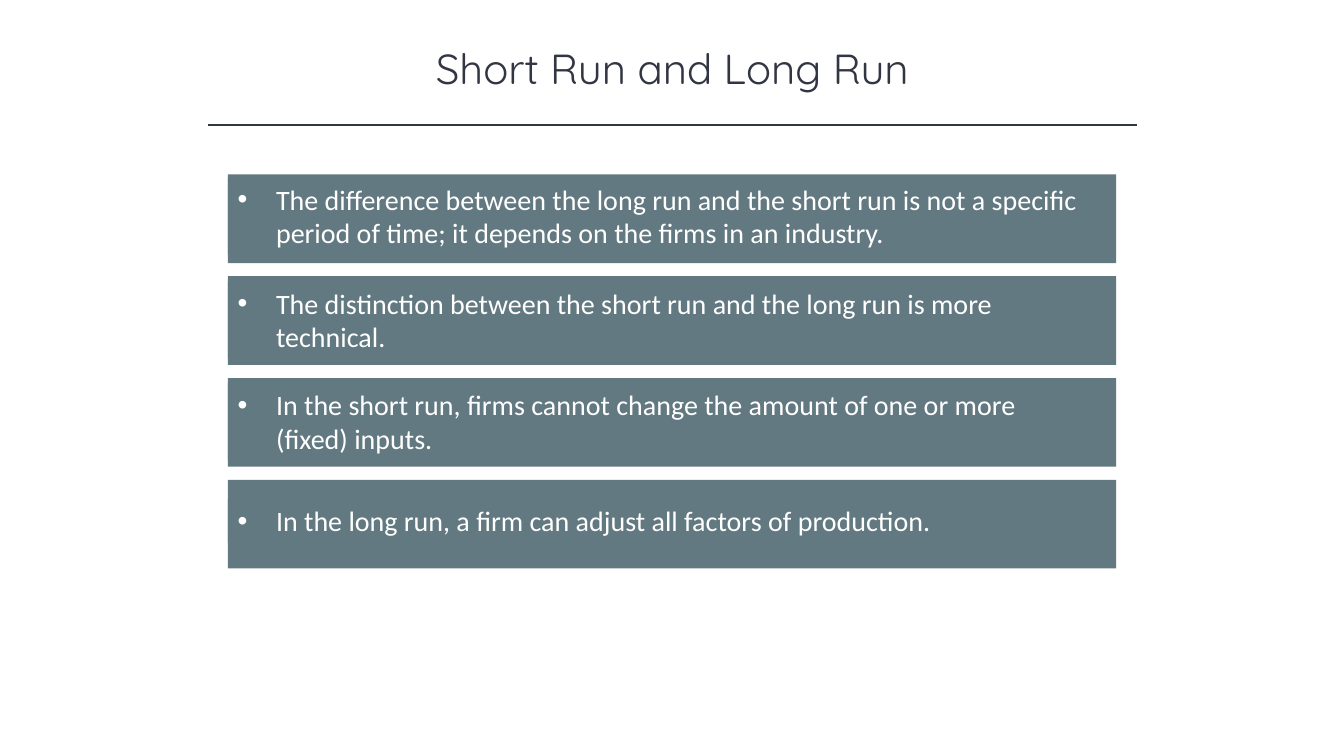
from dataclasses import dataclass

from lxml import etree
from pptx import Presentation
from pptx import util as u
from pptx.dml.color import RGBColor
from pptx.enum import shapes, text
from pptx.oxml.ns import qn

TITLE = "Short Run and Long Run"
POINTS = [
    ("The difference between the long run and the short run is not a specific "
     "period of time; it depends on the firms in an industry.", 0.03, 0.77),
    ("The distinction between the short run and the long run is more technical.", 0.05, 0.77),
    ("In the short run, firms cannot change the amount of one or more (fixed) inputs.", 0.05, 0.77),
    ("In the long run, a firm can adjust all factors of production.", 0.19, 0.44),
]


@dataclass(frozen=True)
class Theme:
    ink: str = "323542"
    bar: str = "627981"
    light: str = "FFFFFF"
    title_font: str = "Quicksand"
    body_font: str = "Calibri"
    title_size: int = 30
    body_size: int = 20


THEME = Theme()
BAR_LEFT, BAR_TOP, BAR_WIDTH, BAR_HEIGHT = 2.26, 1.73, 8.81, 0.88
BAR_PITCH = 1.01
LABEL_WIDTH = 8.54
INDENT = 0.38


def inches(*lengths):
    return [u.Inches(length) for length in lengths]


def write(shape, words, *, font, size, color, align, bullet=False):
    frame = shape.text_frame
    frame.word_wrap = True
    frame.vertical_anchor = text.MSO_ANCHOR.TOP
    frame.auto_size = text.MSO_AUTO_SIZE.SHAPE_TO_FIT_TEXT
    para = frame.paragraphs[0]
    para.alignment = align
    if bullet:
        props = para._p.get_or_add_pPr()
        props.set("marL", str(u.Inches(INDENT)))
        props.set("indent", str(-u.Inches(INDENT)))
        etree.SubElement(props, qn("a:buFont"), typeface="Arial")
        etree.SubElement(props, qn("a:buChar"), char="•")
    span = para.add_run()
    span.text = words
    span.font.name = font
    span.font.size = u.Pt(size)
    span.font.color.rgb = RGBColor.from_string(color)


def add_bar(group, left, top, width, height):
    box = group.shapes.add_shape(
        shapes.MSO_SHAPE.RECTANGLE, *inches(left, top, width, height))
    box.shadow.inherit = False
    box.fill.solid()
    box.fill.fore_color.rgb = RGBColor.from_string(THEME.bar)
    box.line.fill.background()
    return box


def add_rule(page):
    rule = page.shapes.add_connector(
        shapes.MSO_CONNECTOR.STRAIGHT, *inches(2.06, 1.24, 11.28, 1.24))
    rule.line.color.rgb = RGBColor.from_string(THEME.ink)
    rule.line.width = u.Pt(1)
    etree.SubElement(rule._element.spPr, qn("a:effectLst"))


def main():
    deck = Presentation()
    deck.slide_width, deck.slide_height = inches(13.33, 7.5)
    page = deck.slides.add_slide(deck.slide_layouts[6])

    title = page.shapes.add_textbox(*inches(1.67, 0.37, 10, 0.61))
    write(title, TITLE, font=THEME.title_font, size=THEME.title_size,
          color=THEME.ink, align=text.PP_ALIGN.CENTER)
    add_rule(page)

    for index, (words, offset, height) in enumerate(POINTS):
        top = BAR_TOP + index * BAR_PITCH
        group = page.shapes.add_group_shape()
        add_bar(group, BAR_LEFT, top, BAR_WIDTH, BAR_HEIGHT)
        label = add_bar(group, BAR_LEFT, top + offset, LABEL_WIDTH, height)
        write(label, words, font=THEME.body_font, size=THEME.body_size,
              color=THEME.light, align=text.PP_ALIGN.LEFT, bullet=True)

    deck.save("out.pptx")


if __name__ == "__main__":
    main()
